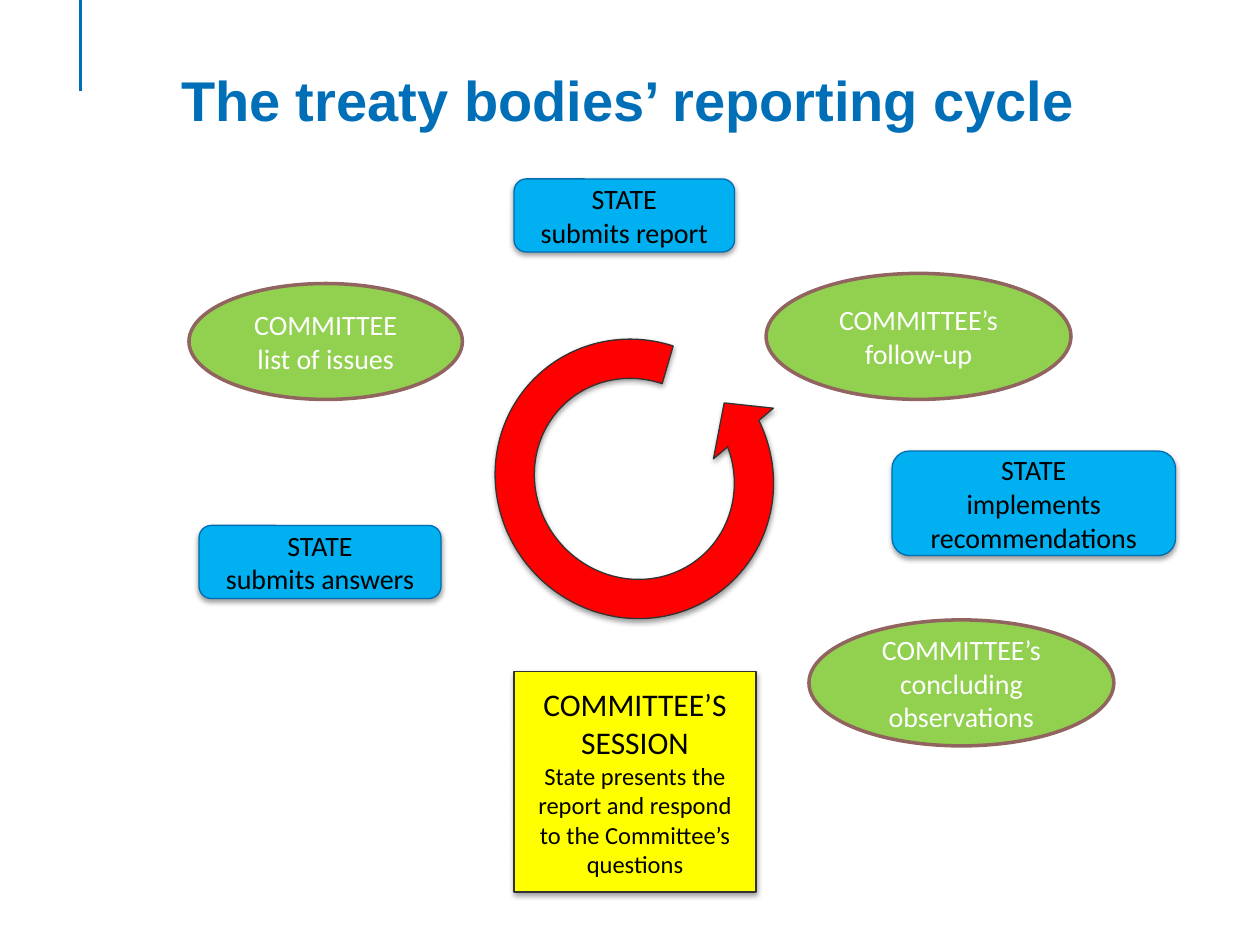
from lxml import etree
from pptx import Presentation
from pptx.dml.color import RGBColor
from pptx.enum.shapes import MSO_CONNECTOR, MSO_SHAPE
from pptx.enum.text import MSO_ANCHOR, PP_ALIGN
from pptx.oxml.ns import qn
from pptx.util import Inches, Pt

ROUNDED = MSO_SHAPE.ROUNDED_RECTANGLE
OVAL = MSO_SHAPE.OVAL
RECTANGLE = MSO_SHAPE.RECTANGLE
CIRCULAR_ARROW = MSO_SHAPE.CIRCULAR_ARROW
STRAIGHT = MSO_CONNECTOR.STRAIGHT
CENTER = PP_ALIGN.CENTER
MIDDLE = MSO_ANCHOR.MIDDLE
TITLE_ONLY = 5

COLORS = {
    "title": "006FB7", "state": "00B0F0", "state_line": "006DB3",
    "committee": "92D050", "committee_line": "92645F",
    "session": "FFFF00", "arrow": "FF0000", "dark_line": "323232",
    "black": "000000", "white": "FFFFFF",
}

# kind: preset shape, fill, line, line width, text colour, shadow
STYLES = {
    "state": (ROUNDED, "state", "state_line", 0.75, "black", True),
    "committee": (OVAL, "committee", "committee_line", 2, "white", False),
    "session": (RECTANGLE, "session", "dark_line", 0.75, "black", True),
    "arrow": (CIRCULAR_ARROW, "arrow", "dark_line", 0.75, "black", True),
}

# kind, box relative to the cycle (left, top, width, height), lines of (text, size)
STEPS = [
    ("state", (2.58, 0, 1.75, 0.58), [("STATE", 16), ("submits report", 16)]),
    ("committee", (0, 0.83, 2.17, 0.92), [("COMMITTEE", 16), ("list of issues", 16)]),
    ("state", (0.08, 2.75, 1.92, 0.58), [("STATE", 16), ("submits answers", 16)]),
    ("committee", (4.92, 3.5, 2.42, 1),
     [("COMMITTEE’s", 16), ("concluding observations", 16)]),
    ("session", (2.58, 3.91, 1.92, 1.75),
     [("COMMITTEE’S SESSION", 18),
      ("State presents the report and respond to the Committee’s questions", 14)]),
    ("state", (5.58, 2.16, 2.25, 0.83),
     [("STATE", 16), ("implements recommendations", 16)]),
    ("committee", (4.58, 0.75, 2.42, 1), [("COMMITTEE’s", 16), ("follow-up", 16)]),
]


def color(name):
    return RGBColor.from_string(COLORS[name])


def add_shadow(shape):
    effects = shape._element.spPr.find(qn("a:effectLst"))
    shadow = etree.SubElement(effects, qn("a:outerShdw"), blurRad=str(Pt(3.1)),
                              dist=str(Pt(1.6)), dir="5400000", rotWithShape="0")
    shade = etree.SubElement(shadow, qn("a:srgbClr"), val=COLORS["black"])
    etree.SubElement(shade, qn("a:alpha"), val="38000")


def add_styled_shape(slide, kind, left, top, width, height):
    preset, fill, line, line_width, _, has_shadow = STYLES[kind]
    shape = slide.shapes.add_shape(
        preset, Inches(left), Inches(top), Inches(width), Inches(height))
    shape.fill.solid()
    shape.fill.fore_color.rgb = color(fill)
    shape.line.color.rgb = color(line)
    shape.line.width = Pt(line_width)
    shape.shadow.inherit = False
    if has_shadow:
        add_shadow(shape)
    return shape


def write_lines(shape, lines, text_color):
    frame = shape.text_frame
    frame.word_wrap = True
    frame.vertical_anchor = MIDDLE
    for index, (text, size) in enumerate(lines):
        paragraph = frame.add_paragraph() if index else frame.paragraphs[0]
        paragraph.text = text
        paragraph.alignment = CENTER
        paragraph.font.name = "Calibri"
        paragraph.font.size = Pt(size)
        paragraph.font.color.rgb = color(text_color)


def draw_accent_line(slide, left, top, length):
    line = slide.shapes.add_connector(
        STRAIGHT, Inches(left), Inches(top), Inches(left), Inches(top + length))
    line.line.color.rgb = color("title")
    line.line.width = Pt(2)
    etree.SubElement(line._element.spPr, qn("a:effectLst"))


def draw_title(slide, left, top, width, height):
    title = slide.shapes.title
    title.left, title.top = Inches(left), Inches(top)
    title.width, title.height = Inches(width), Inches(height)
    title.text_frame.vertical_anchor = MIDDLE
    paragraph = title.text_frame.paragraphs[0]
    paragraph.text = "The treaty bodies’ reporting cycle"
    paragraph.alignment = CENTER
    paragraph.font.name = "Arial"
    paragraph.font.size = Pt(32)
    paragraph.font.bold = True
    paragraph.font.color.rgb = color("title")


def draw_cycle(slide, left, top):
    # Steps around the cycle
    for kind, (x, y, width, height), lines in STEPS:
        shape = add_styled_shape(slide, kind, left + x, top + y, width, height)
        write_lines(shape, lines, STYLES[kind][4])

    # Circular arrow in the middle, mirrored to run anticlockwise
    arrow = add_styled_shape(slide, "arrow", left + 2.29, top + 1.1, 2.49, 2.56)
    arrow.rotation = 138.4
    arrow._element.spPr.find(qn("a:xfrm")).set("flipH", "1")
    for index, value in enumerate((0.125, 10.59, 204.58, 19.27, 0.125)):
        arrow.adjustments[index] = value


def main():
    presentation = Presentation()
    presentation.slide_width, presentation.slide_height = Inches(10), Inches(7.5)
    slide = presentation.slides.add_slide(presentation.slide_layouts[TITLE_ONLY])
    draw_accent_line(slide, 0.64, 0, 0.72)
    draw_title(slide, 0.39, 0.42, 9.19, 0.73)
    draw_cycle(slide, 1.5, 1.42)
    presentation.save("out.pptx")


if __name__ == "__main__":
    main()
